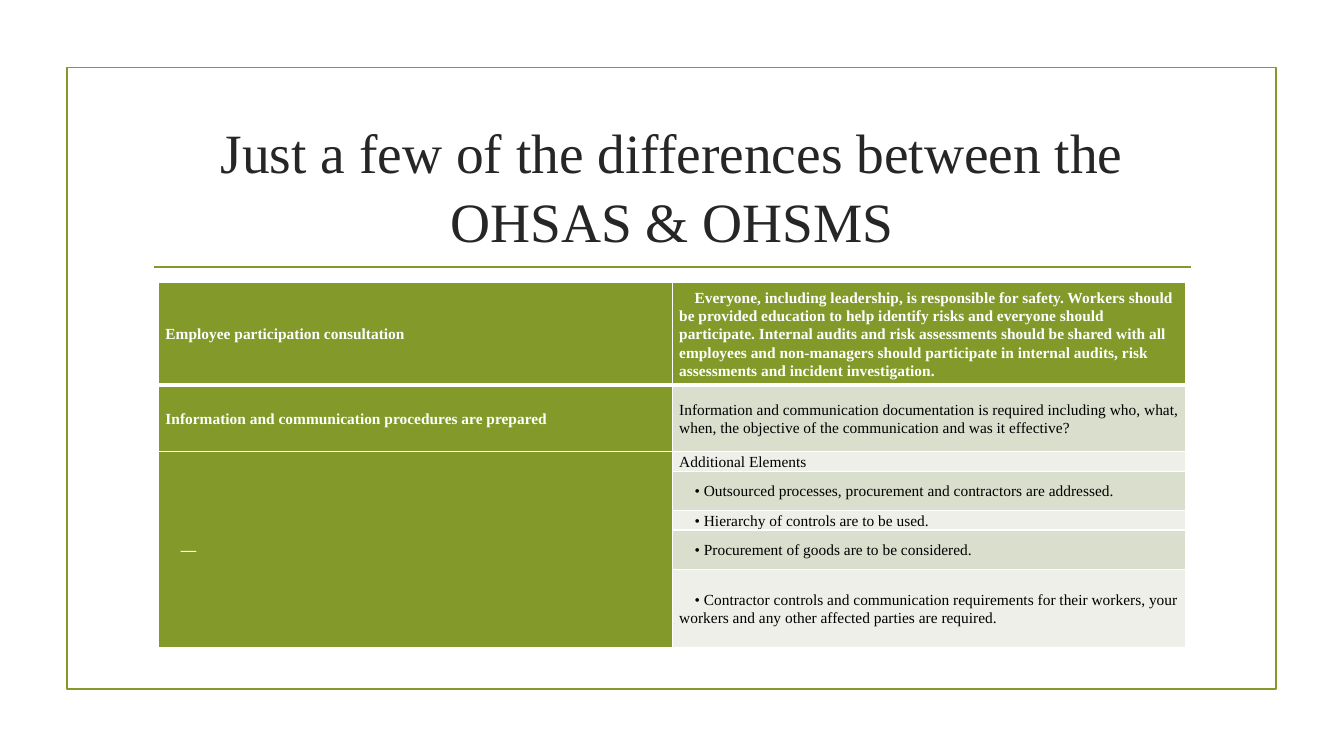
from dataclasses import dataclass

from lxml import etree
from pptx import Presentation
from pptx.dml.color import RGBColor
from pptx.enum import shapes, text
from pptx.oxml import ns
from pptx.util import Pt


@dataclass(frozen=True)
class Theme:
    font: str = "Times New Roman"
    green: str = "83992A"
    sage: str = "D9DECD"
    mist: str = "EDEFE8"
    white: str = "FFFFFF"
    black: str = "000000"
    ink: str = "262626"
    head: float = 39.6
    body: float = 11
    rule: float = 1.25


THEME = Theme()

TITLE = "Just a few of the differences between the OHSAS & OHSMS"
LEFT = [
    ("Employee participation consultation", 0),
    ("Information and communication procedures are prepared", 0),
    ("—", 11),
]
RIGHT = [
    ("Everyone, including leadership, is responsible for safety. Workers should be "
     "provided education to help identify risks and everyone should participate. "
     "Internal audits and risk assessments should be shared with all employees and "
     "non-managers should participate in internal audits, risk assessments and "
     "incident investigation.", 11),
    ("Information and communication documentation is required including who, what, "
     "when, the objective of the communication and was it effective?", 0),
    ("Additional Elements", 0),
    ("• Outsourced processes, procurement and contractors are addressed.", 11),
    ("• Hierarchy of controls are to be used.", 11),
    ("• Procurement of goods are to be considered.", 11),
    ("• Contractor controls and communication requirements for their workers, your "
     "workers and any other affected parties are required.", 11),
]
ROWS = [73.4, 47.5, 14, 28, 14, 28, 56]


def color(code):
    return RGBColor.from_string(code)


def style(font, size, code, bold=False):
    font.name = THEME.font
    font.size = Pt(size)
    font.bold = bold
    font.color.rgb = color(code)


def frame(slide, x, y, w, h):
    box = slide.shapes.add_shape(
        shapes.MSO_SHAPE.RECTANGLE, Pt(x), Pt(y), Pt(w), Pt(h))
    box.shadow.inherit = False
    box.fill.background()
    box.line.color.rgb = color(THEME.green)
    box.line.width = Pt(THEME.rule)


def rule(slide, x, y, end):
    line = slide.shapes.add_connector(
        shapes.MSO_CONNECTOR.STRAIGHT, Pt(x), Pt(y), Pt(end), Pt(y))
    line.line.color.rgb = color(THEME.green)
    line.line.width = Pt(THEME.rule)
    etree.SubElement(line._element.spPr, ns.qn("a:effectLst"))


def title(slide, words, x, y, w, h):
    head = slide.shapes.title
    head.left, head.top, head.width, head.height = Pt(x), Pt(y), Pt(w), Pt(h)
    body = head.text_frame
    body.text = words
    body.word_wrap = True
    body.auto_size = text.MSO_AUTO_SIZE.NONE
    body.vertical_anchor = text.MSO_ANCHOR.MIDDLE
    body.margin_top = Pt(11)
    para = body.paragraphs[0]
    para.alignment = text.PP_ALIGN.CENTER
    para.line_spacing = 1.03
    style(para.font, THEME.head, THEME.ink)


def border(cell, widths):
    props = cell._tc.get_or_add_tcPr()
    for spot, (side, width) in enumerate(widths.items()):
        line = etree.Element(ns.qn(f"a:ln{side}"), w=str(Pt(width)))
        fill = etree.SubElement(line, ns.qn("a:solidFill"))
        etree.SubElement(fill, ns.qn("a:srgbClr"), val=THEME.white)
        props.insert(spot, line)


def paint(cell, code, row):
    cell.fill.solid()
    cell.fill.fore_color.rgb = color(code)
    border(cell, {"L": 1, "R": 1, "T": 3 if row == 1 else 1,
                  "B": 3 if row == 0 else 1})


def write(cell, words, indent, code, bold):
    cell.vertical_anchor = text.MSO_ANCHOR.MIDDLE
    cell.margin_left = cell.margin_right = Pt(5)
    cell.margin_top = cell.margin_bottom = 0
    cell.text = words
    para = cell.text_frame.paragraphs[0]
    para.line_spacing = 1.07
    if indent:
        props = para._p.get_or_add_pPr()
        props.set("marL", "0")
        props.set("indent", str(Pt(indent)))
    style(para.font, THEME.body, code, bold)


def grid(slide, x, y, w):
    table = slide.shapes.add_table(
        len(ROWS), 2, Pt(x), Pt(y), Pt(w), Pt(sum(ROWS))).table
    for col in table.columns:
        col.width = Pt(w / 2)
    for row, high in enumerate(ROWS):
        table.rows[row].height = Pt(high)
        paint(table.cell(row, 0), THEME.green, row)
        band = THEME.sage if row % 2 else THEME.mist
        paint(table.cell(row, 1), band if row else THEME.green, row)
        write(table.cell(row, 0), *(LEFT[row] if row < len(LEFT) else ("", 0)),
              THEME.white, True)
        write(table.cell(row, 1), *RIGHT[row],
              THEME.black if row else THEME.white, row == 0)
    table.cell(2, 0).merge(table.cell(len(ROWS) - 1, 0))


def main():
    deck = Presentation()
    deck.slide_width, deck.slide_height = Pt(960), Pt(540)
    slide = deck.slides.add_slide(deck.slide_layouts[5])
    frame(slide, 47.7, 48.2, 864, 444)
    rule(slide, 110, 190.8, 850.5)
    title(slide, TITLE, 102, 77, 756, 103)
    grid(slide, 113.2, 201.8, 734)
    deck.save("out.pptx")


if __name__ == "__main__":
    main()
